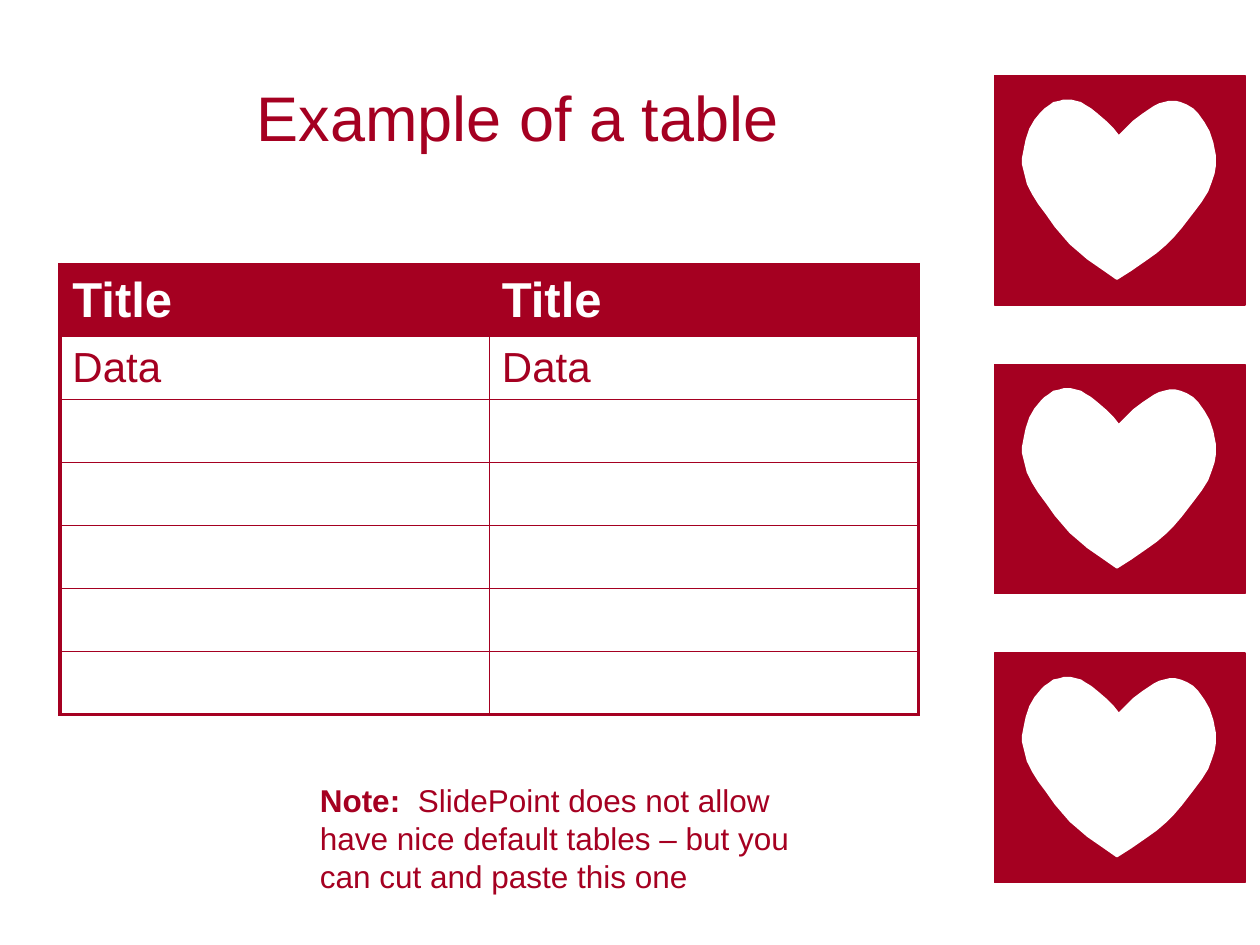
from lxml import etree
from pptx import Presentation
from pptx.dml.color import RGBColor
from pptx.enum.shapes import MSO_SHAPE
from pptx.enum.text import MSO_ANCHOR, PP_ALIGN
from pptx.oxml.ns import qn
from pptx.util import Pt

RECT = MSO_SHAPE.RECTANGLE
MIDDLE = MSO_ANCHOR.MIDDLE
CENTER = PP_ALIGN.CENTER

# Content
FONT, RED, WHITE = "Arial", "A50021", "FFFFFF"
TITLE = "Example of a table"
ROWS = [("Title", "Title"), ("Data", "Data")] + [("", "")] * 5
NOTE = [
    ("Note:  ", True),
    ("SlidePoint does not allow have nice default tables – "
     "but you can cut and paste this one", False),
]

# Layout in points
TITLE_BOX = (36, 21.6, 519.84, 90)
TABLE_LEFT, TABLE_TOP, COL_W = 34.2, 151.2, 245.4
HEAD_H, ROW_H = 41, 36
NOTE_BOX = (175.68, 442.8, 303.12, 72)
TILE_LEFT, TILE_TOP, TILE_W, TILE_H = 568.08, 43.2, 143.28, 131.04
TILE_COUNT, TILE_STEP = 3, 165
THICK, THIN = 2.25, 1

# Heart outline inside its tile, in units of HEART_UNIT points
HEART_UNIT = 0.72
HEART = [
    (25, 51), (28, 42), (32, 35), (37, 29), (40, 26), (43, 24), (47, 21),
    (52, 20), (55, 19), (61, 19), (65, 20), (69, 21), (72, 23), (77, 26),
    (82, 30), (89, 36), (95, 42), (99, 47), (104, 42), (110, 36), (118, 30),
    (127, 24), (131, 22), (135, 21), (139, 20), (144, 20), (148, 21),
    (153, 23), (158, 26), (162, 30), (167, 37), (171, 44), (174, 53),
    (176, 63), (176, 72), (175, 78), (173, 84), (170, 92), (165, 100),
    (159, 108), (149, 121), (143, 128), (136, 135), (129, 141), (122, 146),
    (109, 155), (98, 162), (97, 162), (87, 155), (74, 146), (67, 140),
    (60, 134), (54, 127), (48, 120), (41, 110), (35, 102), (30, 94),
    (26, 86), (24, 78), (23, 74), (22, 70), (22, 66), (23, 61), (24, 56),
]


def rgb(color):
    return RGBColor.from_string(color)


def pts(box):
    return [Pt(v) for v in box]


def add_run(p, text, size, color=RED, bold=False):
    r = p.add_run()
    r.text = text
    r.font.name, r.font.size, r.font.bold = FONT, Pt(size), bold
    r.font.color.rgb = rgb(color)


def paint(sp, color):
    sp.shadow.inherit = False
    sp.fill.solid()
    sp.fill.fore_color.rgb = rgb(color)


def set_border(cell, side, width):
    tcPr = cell._tc.get_or_add_tcPr()
    ln = etree.SubElement(tcPr, qn("a:ln" + side), w=str(Pt(width)))
    fill = etree.SubElement(ln, qn("a:solidFill"))
    etree.SubElement(fill, qn("a:srgbClr"), val=RED)


def add_heart_tile(shapes, left, top):
    sp = shapes.add_shape(RECT, *pts((left, top, TILE_W, TILE_H)))
    paint(sp, RED)
    sp.line.color.rgb = rgb(RED)
    sp.line.width = Pt(0.75)
    builder = shapes.build_freeform(*HEART[0], scale=Pt(HEART_UNIT))
    builder.add_line_segments(HEART[1:], close=True)
    heart = builder.convert_to_shape(Pt(left), Pt(top))
    paint(heart, WHITE)
    heart.line.fill.background()


def add_table(shapes):
    last_row, last_col = len(ROWS) - 1, len(ROWS[0]) - 1
    height = HEAD_H + ROW_H * last_row
    box = (TABLE_LEFT, TABLE_TOP, COL_W * len(ROWS[0]), height)
    table = shapes.add_table(len(ROWS), len(ROWS[0]), *pts(box)).table
    table.first_row = table.horz_banding = False
    for i, row in enumerate(ROWS):
        head = i == 0
        table.rows[i].height = Pt(HEAD_H if head else ROW_H)
        for j, text in enumerate(row):
            cell = table.cell(i, j)
            cell.vertical_anchor = MIDDLE
            # Thick frame outside, thin rules inside
            edges = {"L": j == 0, "R": j == last_col,
                     "T": head, "B": i == last_row}
            for side, outer in edges.items():
                set_border(cell, side, THICK if outer else THIN)
            if head:
                cell.fill.solid()
                cell.fill.fore_color.rgb = rgb(RED)
            else:
                cell.fill.background()
            if text:
                add_run(cell.text_frame.paragraphs[0], text,
                        28 if head else 24, WHITE if head else RED, head)


def main():
    prs = Presentation()
    prs.slide_width, prs.slide_height = Pt(720), Pt(540)
    s = prs.slides.add_slide(prs.slide_layouts[5])

    # Heart column
    for i in range(TILE_COUNT):
        add_heart_tile(s.shapes, TILE_LEFT, TILE_TOP + i * TILE_STEP)

    # Title
    title = s.shapes.title
    title.left, title.top, title.width, title.height = pts(TITLE_BOX)
    title.text_frame.vertical_anchor = MIDDLE
    p = title.text_frame.paragraphs[0]
    p.alignment = CENTER
    add_run(p, TITLE, 36)

    add_table(s.shapes)

    # Note
    tf = s.shapes.add_textbox(*pts(NOTE_BOX)).text_frame
    tf.word_wrap = True
    for text, bold in NOTE:
        add_run(tf.paragraphs[0], text, 18, bold=bold)

    prs.save("out.pptx")


if __name__ == "__main__":
    main()
